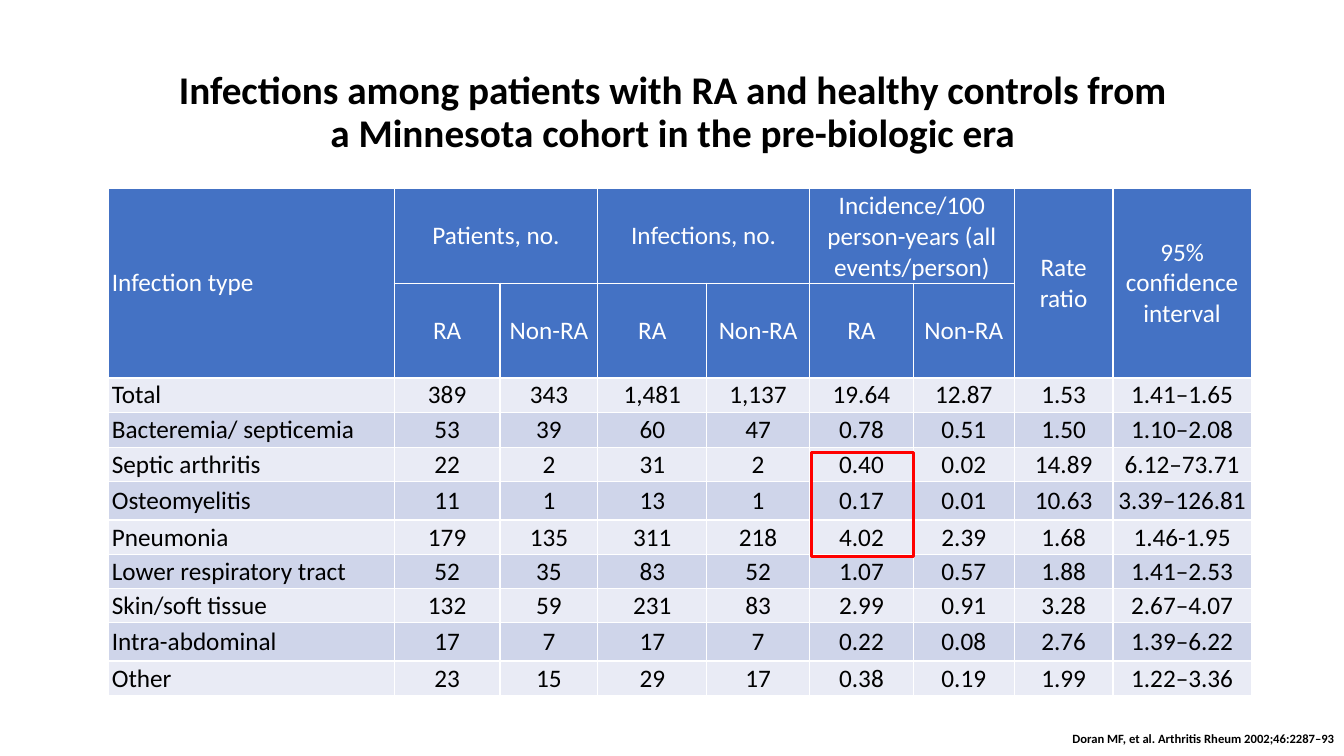
from lxml.etree import SubElement
from pptx import Presentation
from pptx.dml.color import RGBColor
from pptx.enum.shapes import MSO_SHAPE
from pptx.enum.text import MSO_ANCHOR, MSO_AUTO_SIZE, PP_ALIGN
from pptx.oxml.ns import qn
from pptx.util import Pt

EMU_PER_PX = 9144
FONT = "Calibri"
BLACK, WHITE, RED = "000000", "FFFFFF", "FF0000"
HEADER_BLUE = "4472C4"
BAND_COLOURS = ("E9EBF5", "CFD5EA")

COLUMN_WIDTHS = (283, 105, 97, 108, 102, 103, 100, 98, 137)
ROW_HEIGHTS = (90, 32, 32, 35, 25, 38, 18, 32, 32, 38, 28)
HEADER_ROWS = 2
# Row, column, rows spanned, columns spanned
HEADER_MERGES = (
    (0, 0, 2, 1), (0, 1, 1, 2), (0, 3, 1, 2), (0, 5, 1, 2), (0, 7, 2, 1), (0, 8, 2, 1),
)
INFECTION_ROWS = (
    ("Infection type", "Patients, no.", "", "Infections, no.", "",
     "Incidence/100 person-years (all events/person)", "", "Rate ratio",
     "95% confidence interval"),
    ("", "RA", "Non-RA", "RA", "Non-RA", "RA", "Non-RA", "", ""),
    ("Total", "389", "343", "1,481", "1,137", "19.64", "12.87", "1.53", "1.41–1.65"),
    ("Bacteremia/ septicemia", "53", "39", "60", "47", "0.78", "0.51", "1.50", "1.10–2.08"),
    ("Septic arthritis", "22", "2", "31", "2", "0.40", "0.02", "14.89", "6.12–73.71"),
    ("Osteomyelitis", "11", "1", "13", "1", "0.17", "0.01", "10.63", "3.39–126.81"),
    ("Pneumonia", "179", "135", "311", "218", "4.02", "2.39", "1.68", "1.46-1.95"),
    ("Lower respiratory tract", "52", "35", "83", "52", "1.07", "0.57", "1.88", "1.41–2.53"),
    ("Skin/soft tissue", "132", "59", "231", "83", "2.99", "0.91", "3.28", "2.67–4.07"),
    ("Intra-abdominal", "17", "7", "17", "7", "0.22", "0.08", "2.76", "1.39–6.22"),
    ("Other", "23", "15", "29", "17", "0.38", "0.19", "1.99", "1.22–3.36"),
)


def px(length):
    return length * EMU_PER_PX


def colour(hex_string):
    return RGBColor.from_string(hex_string)


def format_text(frame, size, text_colour, align, bold=False):
    for para in frame.paragraphs:
        para.alignment = align
        para.font.size = Pt(size)
        for span in para.runs:
            span.font.name = FONT
            span.font.size = Pt(size)
            span.font.bold = bold
            span.font.color.rgb = colour(text_colour)


def add_text(page, left, top, width, height, text, size, align):
    """Add a wrapped box of bold black text and return its frame."""
    box = page.shapes.add_textbox(px(left), px(top), px(width), px(height))
    frame = box.text_frame
    frame.word_wrap = True
    frame.text = text
    format_text(frame, size, BLACK, align, bold=True)
    return frame


def add_cell_borders(cell):
    """Draw a thin white line on all four sides; call before filling the cell."""
    properties = cell._tc.get_or_add_tcPr()
    for side in ("a:lnL", "a:lnR", "a:lnT", "a:lnB"):
        line = SubElement(properties, qn(side), w=str(Pt(1)))
        fill = SubElement(line, qn("a:solidFill"))
        SubElement(fill, qn("a:srgbClr"), val=WHITE)


def fill_cell(cell, text, fill, text_colour, align):
    cell.margin_left = cell.margin_right = px(3)
    cell.margin_top = cell.margin_bottom = px(2)
    cell.vertical_anchor = MSO_ANCHOR.MIDDLE
    add_cell_borders(cell)
    cell.fill.solid()
    cell.fill.fore_color.rgb = colour(fill)
    cell.text_frame.text = text
    format_text(cell.text_frame, 18, text_colour, align)


def add_infection_table(page, left, top, width, height):
    holder = page.shapes.add_table(
        len(ROW_HEIGHTS), len(COLUMN_WIDTHS), px(left), px(top), px(width), px(height))
    table = holder.table
    table.first_row = table.horz_banding = False
    for column, column_width in zip(table.columns, COLUMN_WIDTHS):
        column.width = px(column_width)
    for row, row_height in zip(table.rows, ROW_HEIGHTS):
        row.height = px(row_height)
    holder.height = px(height)

    for row_index, values in enumerate(INFECTION_ROWS):
        if row_index < HEADER_ROWS:
            fill, text_colour = HEADER_BLUE, WHITE
        else:
            fill, text_colour = BAND_COLOURS[row_index % 2], BLACK
        for column_index, value in enumerate(values):
            align = PP_ALIGN.CENTER if column_index else PP_ALIGN.LEFT
            fill_cell(table.cell(row_index, column_index), value, fill, text_colour, align)

    for row, column, row_span, column_span in HEADER_MERGES:
        last_cell = table.cell(row + row_span - 1, column + column_span - 1)
        table.cell(row, column).merge(last_cell)


def add_highlight(page, left, top, width, height):
    frame = page.shapes.add_shape(
        MSO_SHAPE.RECTANGLE, px(left), px(top), px(width), px(height))
    frame.shadow.inherit = False
    frame.fill.background()
    frame.line.color.rgb = colour(RED)
    frame.line.width = Pt(2.25)


def main():
    deck = Presentation()
    deck.slide_width, deck.slide_height = px(1333), px(750)
    page = deck.slides.add_slide(deck.slide_layouts[6])

    title = add_text(
        page, 92, 40, 1150, 145,
        "Infections among patients with RA and healthy controls from\v"
        "a Minnesota cohort in the pre-biologic era",
        28, PP_ALIGN.CENTER)
    title.vertical_anchor = MSO_ANCHOR.MIDDLE
    title.paragraphs[0].line_spacing = 0.9

    add_infection_table(page, 108, 187, 1133, 434)

    citation = add_text(
        page, 833, 720, 500, 25,
        "Doran MF, et al. Arthritis Rheum 2002;46:2287–93", 9, PP_ALIGN.RIGHT)
    citation.auto_size = MSO_AUTO_SIZE.SHAPE_TO_FIT_TEXT

    add_highlight(page, 805, 449, 101, 103)
    deck.save("out.pptx")


if __name__ == "__main__":
    main()
